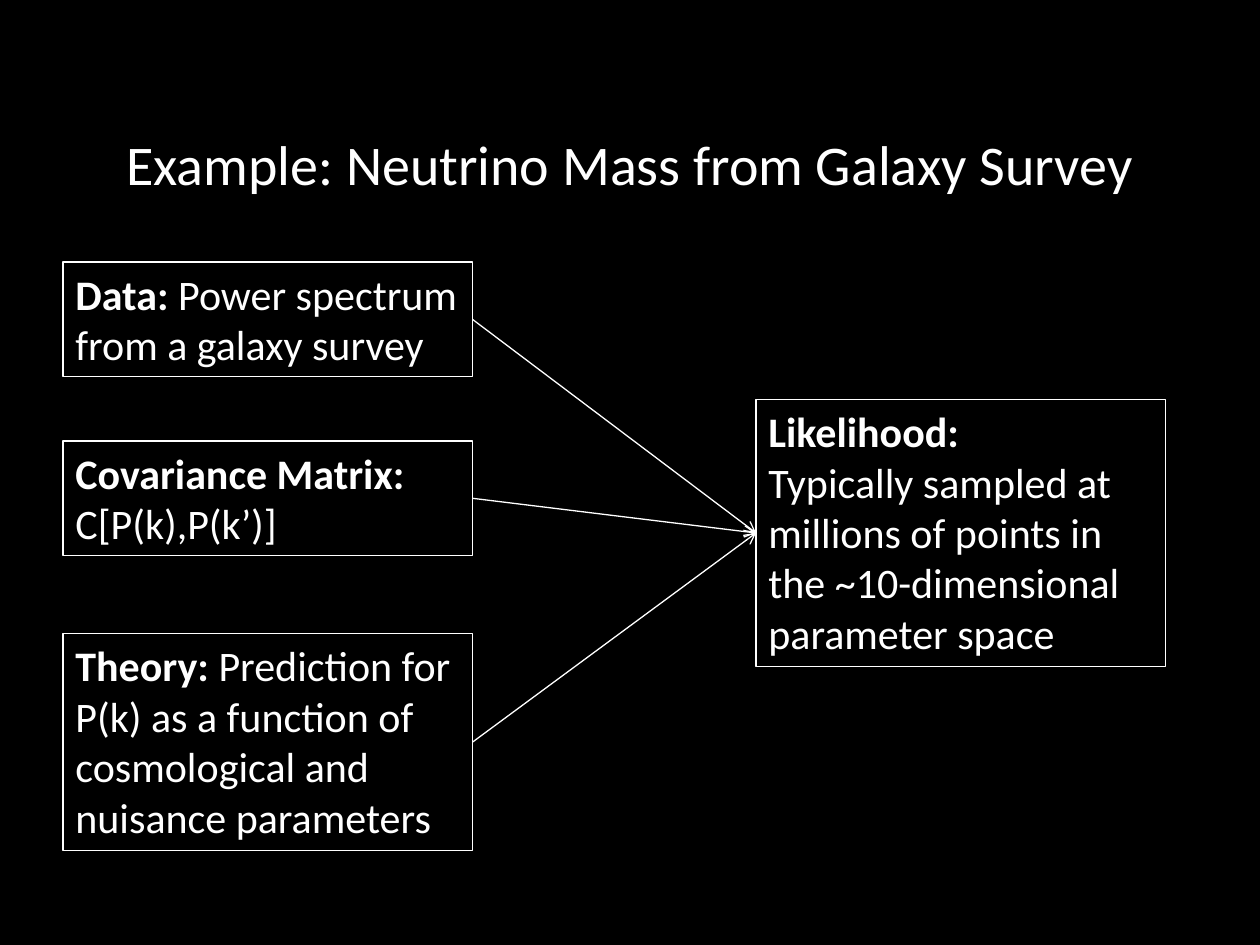
from lxml import etree
from pptx import Presentation
from pptx.dml.color import RGBColor
from pptx.enum import shapes, text
from pptx.oxml.ns import qn
from pptx.util import Inches, Pt

WHITE = RGBColor(0xFF, 0xFF, 0xFF)
BLACK = RGBColor(0x00, 0x00, 0x00)
FONT = "Calibri"
BOX_WIDTH = 3.25
INPUT_LEFT = 0.5
RIGHT_SIDE, LEFT_SIDE = 3, 1

INPUTS = [
    (2.08, 0.91, [[("Data: ", True), ("Power spectrum from a galaxy survey", False)]]),
    (3.5, 0.91, [[("Covariance Matrix:", True)], [("C[P(k),P(k’)]", False)]]),
    (5.03, 1.72, [[("Theory: ", True),
                   ("Prediction for P(k) as a function of cosmological "
                    "and nuisance parameters", False)]]),
]
LIKELIHOOD = [
    [("Likelihood:", True)],
    [("Typically sampled at millions of points in the ~10-dimensional "
      "parameter space", False)],
]


def add_run(paragraph, words, size, bold=False):
    run = paragraph.add_run()
    run.text = words
    run.font.name = FONT
    run.font.size = Pt(size)
    run.font.bold = bold
    run.font.color.rgb = WHITE


def place_title(slide, left, top, width, height):
    title = slide.shapes.title
    title.left, title.top = Inches(left), Inches(top)
    title.width, title.height = Inches(width), Inches(height)
    title.text_frame.vertical_anchor = text.MSO_ANCHOR.MIDDLE
    paragraph = title.text_frame.paragraphs[0]
    paragraph.alignment = text.PP_ALIGN.CENTER
    add_run(paragraph, "Example: Neutrino Mass from Galaxy Survey", 32)


def add_box(slide, left, top, width, height, paragraphs):
    box = slide.shapes.add_shape(shapes.MSO_SHAPE.RECTANGLE, Inches(left),
                                 Inches(top), Inches(width), Inches(height))
    box.shadow.inherit = False
    box.fill.background()
    box.line.color.rgb = WHITE
    box.line.width = Pt(0.75)
    frame = box.text_frame
    frame.word_wrap = True
    frame.auto_size = text.MSO_AUTO_SIZE.SHAPE_TO_FIT_TEXT
    frame.vertical_anchor = text.MSO_ANCHOR.TOP
    for index, runs in enumerate(paragraphs):
        paragraph = frame.add_paragraph() if index else frame.paragraphs[0]
        paragraph.alignment = text.PP_ALIGN.LEFT
        for words, bold in runs:
            add_run(paragraph, words, 24, bold)
    return box


def add_arrow(slide, source, target):
    arrow = slide.shapes.add_connector(shapes.MSO_CONNECTOR.STRAIGHT, 0, 0, 0, 0)
    arrow.begin_connect(source, RIGHT_SIDE)
    arrow.end_connect(target, LEFT_SIDE)
    arrow.line.color.rgb = WHITE
    arrow.line.width = Pt(0.75)
    etree.SubElement(arrow.line._get_or_add_ln(), qn("a:tailEnd"), type="arrow")
    etree.SubElement(arrow._element.spPr, qn("a:effectLst"))


def add_flow(slide):
    inputs = [add_box(slide, INPUT_LEFT, top, BOX_WIDTH, height, paragraphs)
              for top, height, paragraphs in INPUTS]
    likelihood = add_box(slide, 6, 3.17, BOX_WIDTH, 2.12, LIKELIHOOD)
    for source in inputs:
        add_arrow(slide, source, likelihood)


def main():
    presentation = Presentation()
    presentation.slide_width = Inches(10)
    presentation.slide_height = Inches(7.5)
    slide = presentation.slides.add_slide(presentation.slide_layouts[5])
    slide.background.fill.solid()
    slide.background.fill.fore_color.rgb = BLACK
    place_title(slide, 0.75, 0.67, 8.5, 1.25)
    add_flow(slide)
    presentation.save("out.pptx")


if __name__ == "__main__":
    main()
